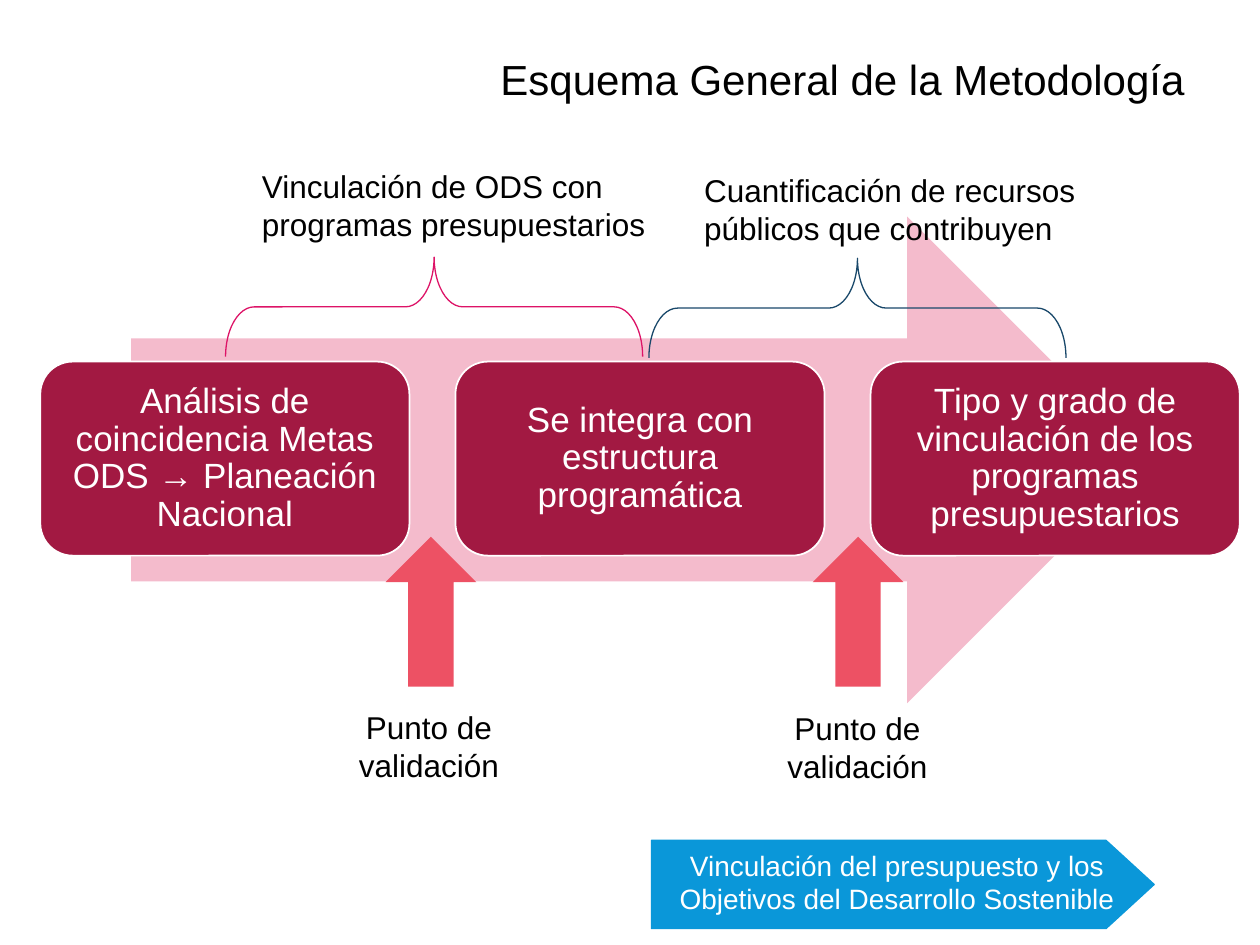
from lxml import etree
from pptx import Presentation
from pptx.dml.color import RGBColor
from pptx.enum.shapes import MSO_SHAPE
from pptx.enum.text import MSO_ANCHOR, PP_ALIGN
from pptx.oxml.ns import qn
from pptx.util import Inches, Pt

PENTAGON = MSO_SHAPE.PENTAGON
RIGHT_ARROW = MSO_SHAPE.RIGHT_ARROW
UP_ARROW = MSO_SHAPE.UP_ARROW
ROUNDED = MSO_SHAPE.ROUNDED_RECTANGLE
BRACE = MSO_SHAPE.LEFT_BRACE
LEFT, CENTER, RIGHT = PP_ALIGN.LEFT, PP_ALIGN.CENTER, PP_ALIGN.RIGHT
TOP, MIDDLE = MSO_ANCHOR.TOP, MSO_ANCHOR.MIDDLE

WHITE = RGBColor(0xFF, 0xFF, 0xFF)
BLACK = RGBColor(0x00, 0x00, 0x00)
BLUE = RGBColor(0x0A, 0x97, 0xD9)
NAVY = RGBColor(0x19, 0x48, 0x6A)
PINK = RGBColor(0xDF, 0x31, 0x67)
MAGENTA = RGBColor(0xDD, 0x13, 0x67)
CRIMSON = RGBColor(0xA2, 0x19, 0x42)
CORAL = RGBColor(0xED, 0x51, 0x64)

FONT = "Arial"
STEPS = [
    "Análisis de coincidencia Metas ODS → Planeación Nacional",
    "Se integra con estructura programática",
    "Tipo y grado de vinculación de los programas presupuestarios",
]
STEP_LEFT, STEP_PITCH = 0.32, 3.295
PHASES = [
    ("Vinculación de ODS con programas presupuestarios", 1.98, 1.28, 3.05, 0.78, MAGENTA),
    ("Cuantificación de recursos públicos que contribuyen", 5.49, 1.31, 6.41, 0.79, NAVY),
]
CHECKPOINTS = [(3.06, 2.37, 5.57), (6.45, 5.77, 5.58)]


def write(s, text, size=18, color=BLACK, align=LEFT, anchor=TOP,
          spacing=None, margins=(0.1, 0.05, 0.1, 0.05)):
    tf = s.text_frame
    tf.word_wrap = True
    tf.vertical_anchor = anchor
    tf.margin_left, tf.margin_top, tf.margin_right, tf.margin_bottom = map(Inches, margins)
    p = tf.paragraphs[0]
    p.alignment = align
    if spacing:
        p.line_spacing = spacing
    r = p.add_run()
    r.text = text
    r.font.name = FONT
    r.font.size = Pt(size)
    r.font.color.rgb = color


def add_text(sp, at, text, **fmt):
    write(sp.add_textbox(*map(Inches, at)), text, **fmt)


def add_shape(sp, kind, at, fill=None, line=None, width=0.75, adj=(), alpha=None):
    s = sp.add_shape(kind, *map(Inches, at))
    s.shadow.inherit = False
    for i, value in enumerate(adj):
        s.adjustments[i] = value
    if fill is None:
        s.fill.background()
    else:
        s.fill.solid()
        s.fill.fore_color.rgb = fill
    if alpha is not None:
        clr = s.fill._xPr.find(qn("a:solidFill"))[0]
        etree.SubElement(clr, qn("a:alpha")).set("val", str(alpha * 1000))
    if line is None:
        s.line.fill.background()
    else:
        s.line.color.rgb = line
        s.line.width = Pt(width)
    return s


def add_step(sp, i, text):
    at = (STEP_LEFT + i * STEP_PITCH, 2.87, 2.93, 1.54)
    s = add_shape(sp, ROUNDED, at, CRIMSON, WHITE, 1, adj=[0.167])
    write(s, text, size=20, color=WHITE, align=CENTER, anchor=MIDDLE,
          spacing=0.9, margins=(0.08,) * 4)


def add_checkpoint(sp, arrow_left, text_left, text_top):
    add_shape(sp, UP_ARROW, (arrow_left, 4.26, 0.72, 1.19), CORAL)
    add_text(sp, (text_left, text_top, 2.07, 0.71), "Punto de validación", align=CENTER)


def add_phase(sp, text, left, top, brace_left, brace_top, color):
    s = add_shape(sp, BRACE, (brace_left, brace_top, 0.79, 3.31),
                  line=color, adj=[0.288, 0.5])
    s.rotation = 90
    add_text(sp, (left, top, 3.35, 0.71), text)


def main():
    prs = Presentation()
    prs.slide_width, prs.slide_height = Inches(10), Inches(7.5)
    sp = prs.slides.add_slide(prs.slide_layouts[6]).shapes

    s = add_shape(sp, PENTAGON, (5.17, 6.67, 3.99, 0.7), BLUE, BLUE, adj=[0.545])
    write(s, "Vinculación del presupuesto y los Objetivos del Desarrollo Sostenible",
          size=16, color=WHITE, align=CENTER, anchor=MIDDLE, margins=(0.1, 0.12, 0, 0.16))
    add_text(sp, (0.5, 0.3, 9, 0.7), "Esquema General de la Metodología",
             size=24, align=RIGHT, anchor=MIDDLE, spacing=0.9)

    add_shape(sp, RIGHT_ARROW, (1.04, 1.72, 8.09, 3.86), PINK, adj=[0.5, 0.5], alpha=33)
    for i, text in enumerate(STEPS):
        add_step(sp, i, text)
    for checkpoint in CHECKPOINTS:
        add_checkpoint(sp, *checkpoint)
    for phase in PHASES:
        add_phase(sp, *phase)

    prs.save("out.pptx")


if __name__ == "__main__":
    main()
